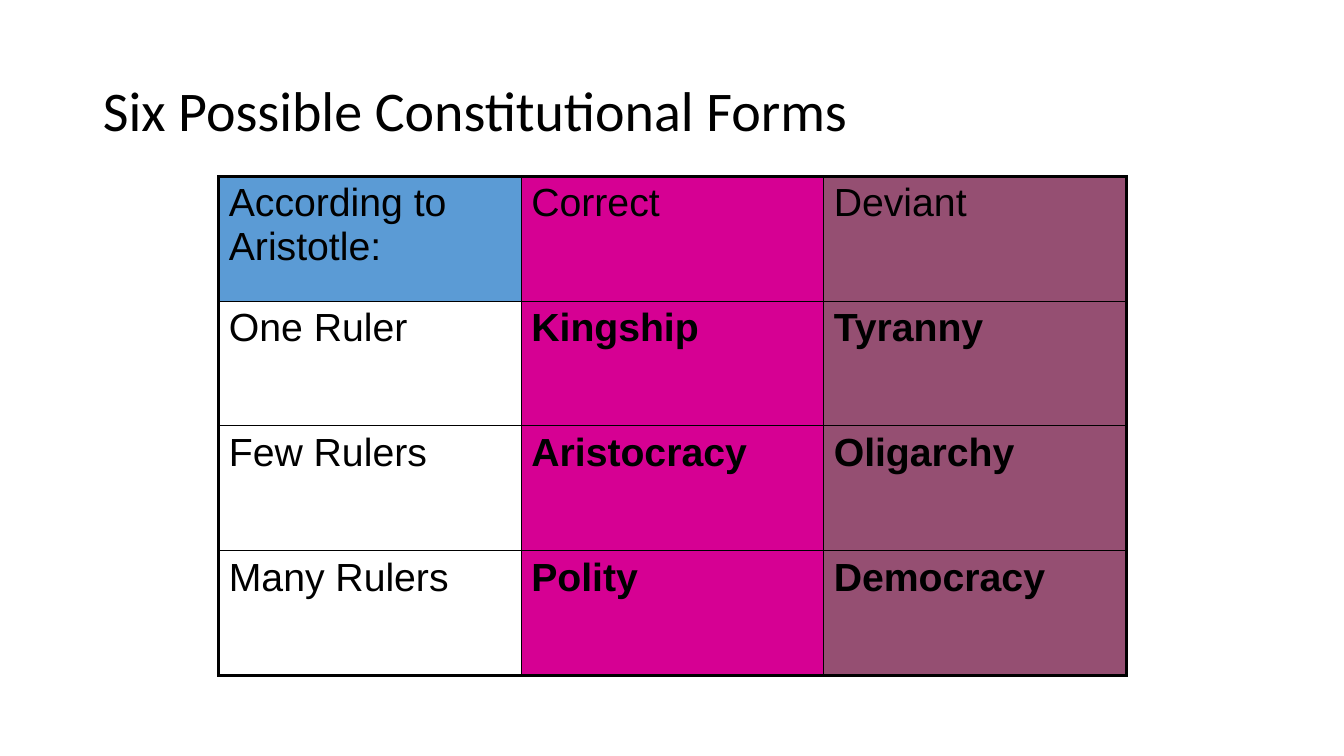
from dataclasses import dataclass

from lxml import etree
from pptx import Presentation
from pptx import util as u
from pptx.dml.color import RGBColor
from pptx.enum import text
from pptx.oxml import ns


@dataclass(frozen=True)
class Theme:
    ink: str = "000000"
    corner: str = "5B9BD5"
    correct: str = "D60093"
    deviant: str = "954F72"
    title_font: str = "Calibri"
    table_font: str = "Arial"
    title_size: int = 40
    table_size: int = 28
    outer_line: float = 2.25
    inner_line: float = 1


THEME = Theme()
TITLE_BOX = (0.92, 0.4, 11.5, 1.45)
TABLE_BOX = (2.17, 1.75, 9, 4.95)
FORMS = [
    ("According to Aristotle:", "Correct", "Deviant"),
    ("One Ruler", "Kingship", "Tyranny"),
    ("Few Rulers", "Aristocracy", "Oligarchy"),
    ("Many Rulers", "Polity", "Democracy"),
]


def add_run(paragraph, words, font, size, bold=False):
    run = paragraph.add_run()
    run.text = words
    run.font.name = font
    run.font.size = u.Pt(size)
    run.font.bold = bold
    run.font.color.rgb = RGBColor.from_string(THEME.ink)


def add_title(slide, box, words):
    title = slide.shapes.title
    title.left, title.top, title.width, title.height = map(u.Inches, box)
    title.text_frame.vertical_anchor = text.MSO_ANCHOR.MIDDLE
    paragraph = title.text_frame.paragraphs[0]
    paragraph.alignment = text.PP_ALIGN.LEFT
    paragraph.line_spacing = 0.9
    add_run(paragraph, words, THEME.title_font, THEME.title_size)


def set_borders(cell, outer_sides):
    """Draw four borders, heavier on the sides that lie on the table's edge."""
    properties = cell._tc.get_or_add_tcPr()
    for position, side in enumerate("LRTB"):
        width = THEME.outer_line if side in outer_sides else THEME.inner_line
        line = etree.Element(ns.qn(f"a:ln{side}"), w=str(u.Pt(width)))
        fill = etree.SubElement(line, ns.qn("a:solidFill"))
        etree.SubElement(fill, ns.qn("a:srgbClr"), val=THEME.ink)
        properties.insert(position, line)


def add_forms_table(slide, box, rows):
    row_count, column_count = len(rows), len(rows[0])
    frame = slide.shapes.add_table(row_count, column_count, *map(u.Inches, box))
    table = frame.table
    table.first_row = table.horz_banding = False
    for column in table.columns:
        column.width = u.Inches(box[2] / column_count)
    for row in table.rows:
        row.height = u.Inches(box[3] / row_count)

    for r, words_in_row in enumerate(rows):
        for c, words in enumerate(words_in_row):
            cell = table.cell(r, c)
            # Each form has its column colour; ruler names stay unfilled
            color = (THEME.corner if r == 0 else None, THEME.correct, THEME.deviant)[c]
            if color:
                cell.fill.solid()
                cell.fill.fore_color.rgb = RGBColor.from_string(color)
            else:
                cell.fill.background()
            edges = {"L": c == 0, "R": c == column_count - 1,
                     "T": r == 0, "B": r == row_count - 1}
            set_borders(cell, [side for side, on_edge in edges.items() if on_edge])
            add_run(cell.text_frame.paragraphs[0], words, THEME.table_font,
                    THEME.table_size, bold=r > 0 and c > 0)


def main():
    presentation = Presentation()
    presentation.slide_width = u.Inches(13.33)
    presentation.slide_height = u.Inches(7.5)
    slide = presentation.slides.add_slide(presentation.slide_layouts[5])
    add_title(slide, TITLE_BOX, "Six Possible Constitutional Forms")
    add_forms_table(slide, TABLE_BOX, FORMS)
    presentation.save("out.pptx")


if __name__ == "__main__":
    main()
